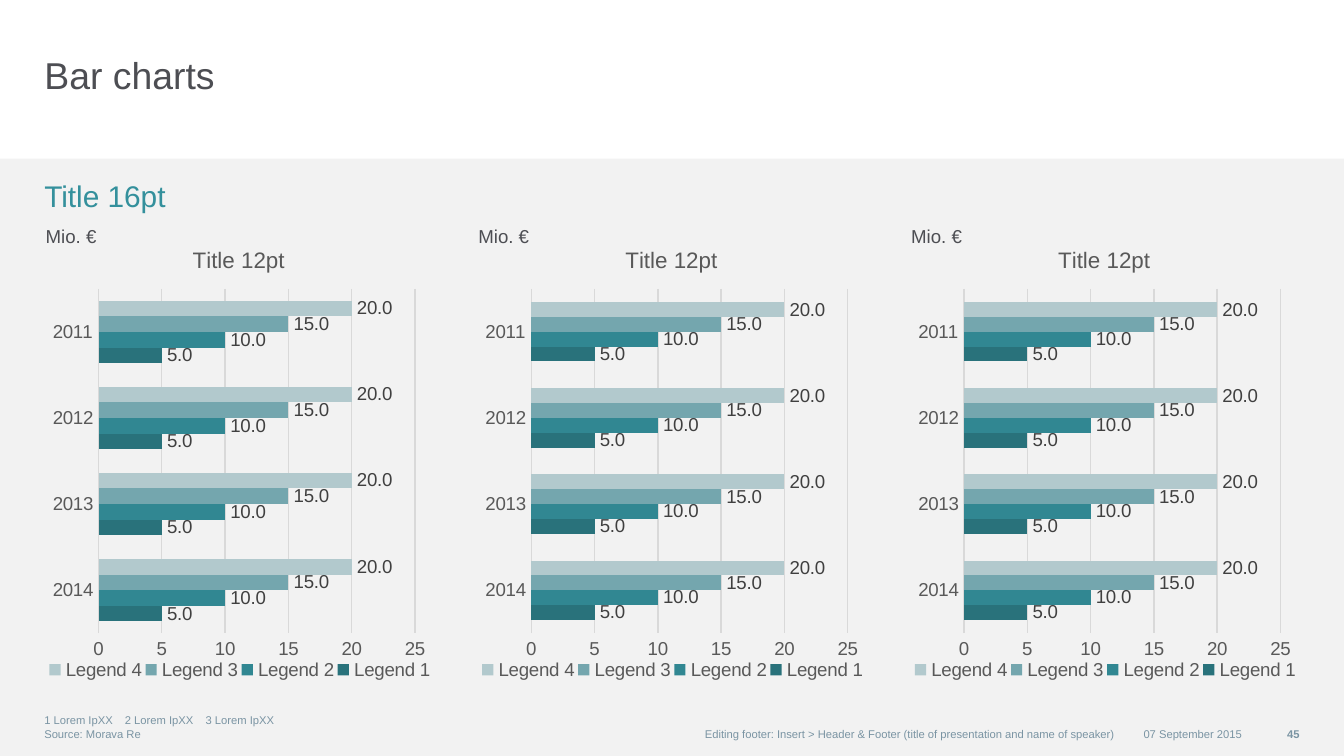
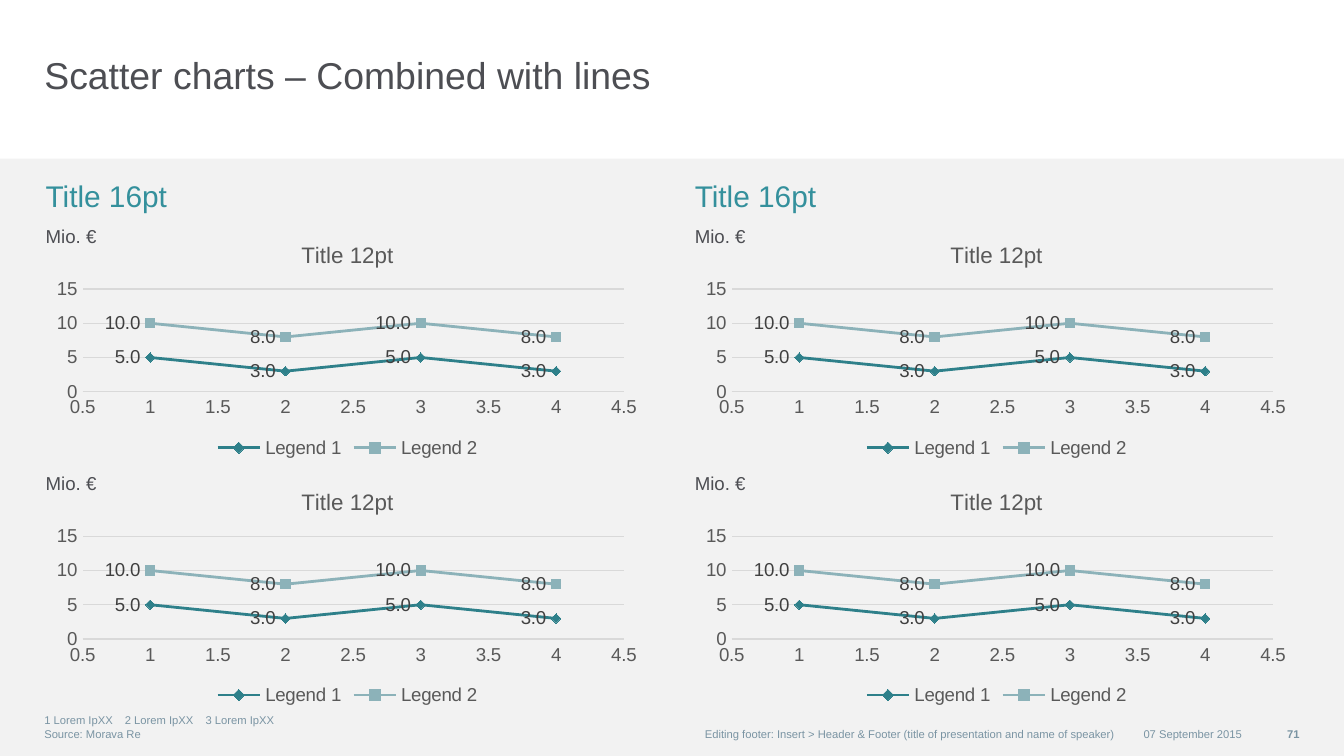
from lxml import etree
from pptx import Presentation
from pptx.chart.data import CategoryChartData, XyChartData
from pptx.chart.datalabel import DataLabels
from pptx.dml.color import RGBColor
from pptx.enum.chart import (XL_CHART_TYPE, XL_LABEL_POSITION, XL_LEGEND_POSITION,
                             XL_MARKER_STYLE, XL_TICK_MARK)
from pptx.enum.shapes import MSO_SHAPE
from pptx.enum.text import MSO_ANCHOR, PP_ALIGN
from pptx.oxml.ns import qn
from pptx.util import Inches, Pt

BAR, SCATTER = XL_CHART_TYPE.BAR_CLUSTERED, XL_CHART_TYPE.XY_SCATTER_LINES
OUTSIDE, LEFT_OF = XL_LABEL_POSITION.OUTSIDE_END, XL_LABEL_POSITION.LEFT
BOTTOM_LEGEND, NO_TICK = XL_LEGEND_POSITION.BOTTOM, XL_TICK_MARK.NONE
DIAMOND, SQUARE = XL_MARKER_STYLE.DIAMOND, XL_MARKER_STYLE.SQUARE
TOP, MIDDLE, BOTTOM = MSO_ANCHOR.TOP, MSO_ANCHOR.MIDDLE, MSO_ANCHOR.BOTTOM
LEFT, RIGHT = PP_ALIGN.LEFT, PP_ALIGN.RIGHT

FONT = "Arial"
COLORS = {"band": "F2F2F2", "text": "4D4E53", "heading": "34909C", "footer": "7A94A3",
          "chart": "595959", "label": "404040", "grid": "D9D9D9"}

# Content
HEADING, UNIT, CHART_TITLE = "Title 16pt", "Mio. €", "Title 12pt"
FOOTNOTES = ["1 Lorem IpXX\t2 Lorem IpXX\t3 Lorem IpXX", "Source: Morava Re"]
FOOTER = "Editing footer: Insert > Header & Footer (title of presentation and name of speaker)"
DATE = "07 September 2015"

YEARS = ["2014", "2013", "2012", "2011"]
BAR_SERIES = [("Legend 1", [5] * 4, "29727B"), ("Legend 2", [10] * 4, "318792"),
              ("Legend 3", [15] * 4, "74A6AE"), ("Legend 4", [20] * 4, "B2C9CD")]
BAR_GAPS = [150, 182, 182]

POINTS_X = [1, 2, 3, 4]
LINE_SERIES = [("Legend 1", [5, 3, 5, 3], "2E808A", DIAMOND),
               ("Legend 2", [10, 8, 10, 8], "8CB2B9", SQUARE)]

# Grid: left edge, column step, chart size
LEFT_EDGE, CHART_TOP = 0.34, 1.67
BAR_STEP, BAR_SIZE = 3.22, (2.89, 3.61)
LINE_STEP, LINE_SIZE = (4.83, 1.84), (4.49, 1.78)

# Chart parts in percent of the chart: x, y, width, height
BAR_LAYOUT = {"plot": (13.6, 13.3, 81.5, 71), "title": (36.8, 3.6),
              "legend": (0, 88.8, 100, 6)}
LINE_LAYOUT = {"plot": (6.1, 27, 89.7, 43), "title": (41.7, 5.2)}


def rgb(name):
    return RGBColor.from_string(COLORS.get(name, name))


def style_font(font, size, color, bold=False):
    font.name, font.size, font.bold = FONT, Pt(size), bold
    font.color.rgb = rgb(color)


def fill_frame(frame, lines, size, color, anchor=TOP, align=LEFT, bold=False,
               wrap=True, tabs=()):
    frame.margin_left = frame.margin_right = frame.margin_top = frame.margin_bottom = 0
    frame.word_wrap, frame.vertical_anchor = wrap, anchor
    for index, line in enumerate(lines):
        para = frame.add_paragraph() if index else frame.paragraphs[0]
        para.text, para.alignment = line, align
        if "\t" in line:
            stops = etree.SubElement(para._p.get_or_add_pPr(), qn("a:tabLst"))
            for position in tabs:
                etree.SubElement(stops, qn("a:tab"), pos=str(Inches(position)), algn="l")
        style_font(para.font, size, color, bold)


def add_text(page, place, lines, size, color, **options):
    box = page.shapes.add_textbox(*map(Inches, place))
    fill_frame(box.text_frame, lines, size, color, **options)


def add_page(deck, title, number):
    page = deck.slides.add_slide(deck.slide_layouts[5])
    # Content band
    top = Inches(1.18)
    band = page.shapes.add_shape(MSO_SHAPE.RECTANGLE, 0, top, deck.slide_width,
                                 deck.slide_height - top)
    band.shadow.inherit = False
    band.fill.solid()
    band.fill.fore_color.rgb = rgb("band")
    band.line.fill.background()
    # Title
    holder = page.shapes.title
    holder.left, holder.top, holder.width, holder.height = map(Inches, (0.33, 0.39, 7.48, 0.61))
    fill_frame(holder.text_frame, [title], 20, "text")
    # Footer row
    add_text(page, (0.33, 5.35, 3.94, 0.16), FOOTNOTES, 6, "footer", anchor=BOTTOM,
             tabs=(0.6, 1.2))
    for left, width, text, bold in [(4.35, 3.94, FOOTER, False), (8.33, 0.91, DATE, False),
                                    (9.24, 0.43, number, True)]:
        add_text(page, (left, 5.35, width, 0.22), [text], 6, "footer", anchor=MIDDLE,
                 align=RIGHT, bold=bold)
    return page


def add_heading(page, left, width):
    add_text(page, (left, 1.32, width, 0.35), [HEADING], 16, "heading")


def place_part(part, percents, index, inner=False):
    layout = part.find(qn("c:layout"))
    if layout is None:
        layout = part.makeelement(qn("c:layout"))
        part.insert(index, layout)
    manual = etree.SubElement(layout, qn("c:manualLayout"))
    if inner:
        etree.SubElement(manual, qn("c:layoutTarget"), val="inner")
    for axis in "xy":
        etree.SubElement(manual, qn(f"c:{axis}Mode"), val="edge")
    for name, percent in zip("xywh", percents):
        etree.SubElement(manual, qn(f"c:{name}"), val=f"{percent / 100:.3f}")


def no_fill():
    props = etree.Element(qn("c:spPr"))
    etree.SubElement(props, qn("a:noFill"))
    etree.SubElement(etree.SubElement(props, qn("a:ln")), qn("a:noFill"))
    return props


def style_line(line, color, width):
    line.color.rgb, line.width = rgb(color), Pt(width)


def set_scale(axis, low, high, step):
    axis.minimum_scale, axis.maximum_scale, axis.major_unit = low, high, step


def add_chart(page, kind, place, data, layout, label_position):
    chart = page.shapes.add_chart(kind, *map(Inches, place), data).chart
    style_font(chart.font, 10, "chart")
    chart.plots[0].vary_by_categories = False
    # Title and legend
    chart.has_title = chart.has_legend = True
    title = chart.chart_title
    title.text_frame.text = CHART_TITLE
    style_font(title.text_frame.paragraphs[0].font, 12, "chart")
    place_part(title._element, layout["title"], 1)
    legend = chart.legend
    legend.position, legend.include_in_layout = BOTTOM_LEGEND, False
    style_font(legend.font, 10, "chart")
    if "legend" in layout:
        place_part(legend._element, layout["legend"], 1)
    # Axes
    for axis in (chart.category_axis, chart.value_axis):
        axis.major_tick_mark = axis.minor_tick_mark = NO_TICK
        axis.has_major_gridlines = False
        style_font(axis.tick_labels.font, 10, "chart")
    style_line(chart.category_axis.format.line, "grid", 0.75)
    chart.value_axis.format.line.fill.background()
    chart.value_axis.has_major_gridlines = True
    style_line(chart.value_axis.major_gridlines.format.line, "grid", 0.75)
    # Value labels
    for series in chart.plots[0].series:
        labels = DataLabels(series._element.get_or_add_dLbls())
        labels.show_value, labels.position = True, label_position
        labels.number_format, labels.number_format_is_linked = "#,##0.0", False
        style_font(labels.font, 10, "label")
    # Clear background
    space = chart._chartSpace
    plot_area = space.find(qn("c:chart")).find(qn("c:plotArea"))
    place_part(plot_area, layout["plot"], 0, inner=True)
    plot_area.append(no_fill())
    space.find(qn("c:txPr")).addprevious(no_fill())
    # Unit above the axis
    add_text(page, (*place[:2], 0.38, 0.17), [UNIT], 10, "text", wrap=False)
    return chart


def add_bar_chart(page, place, gap):
    data = CategoryChartData()
    data.categories = YEARS
    for name, values, _ in BAR_SERIES:
        data.add_series(name, values)
    chart = add_chart(page, BAR, place, data, BAR_LAYOUT, OUTSIDE)
    chart.plots[0].gap_width = gap
    set_scale(chart.value_axis, 0, 25, 5)
    for series, (_, _, color) in zip(chart.plots[0].series, BAR_SERIES):
        series.format.fill.solid()
        series.format.fill.fore_color.rgb = rgb(color)


def add_line_chart(page, place):
    data = XyChartData()
    for name, values, _, _ in LINE_SERIES:
        points = data.add_series(name)
        for x, y in zip(POINTS_X, values):
            points.add_data_point(x, y)
    chart = add_chart(page, SCATTER, place, data, LINE_LAYOUT, LEFT_OF)
    set_scale(chart.category_axis, 0.5, 4.5, 0.5)
    set_scale(chart.value_axis, 0, 15, 5)
    for series, (_, _, color, symbol) in zip(chart.plots[0].series, LINE_SERIES):
        style_line(series.format.line, color, 1.5)
        marker = series.marker
        marker.style, marker.size = symbol, 5
        marker.format.fill.solid()
        marker.format.fill.fore_color.rgb = rgb(color)
        style_line(marker.format.line, color, 0.75)


def main():
    deck = Presentation()
    deck.slide_width, deck.slide_height = Inches(10), Inches(10) * 9 // 16

    # Bar charts: one row of three
    page = add_page(deck, "Bar charts", "45")
    add_heading(page, 0.33, 9.33)
    for column, gap in enumerate(BAR_GAPS):
        add_bar_chart(page, (LEFT_EDGE + column * BAR_STEP, CHART_TOP, *BAR_SIZE), gap)

    # Scatter charts: two by two
    page = add_page(deck, "Scatter charts – Combined with lines", "71")
    for column in range(2):
        left = LEFT_EDGE + column * LINE_STEP[0]
        add_heading(page, left, 4.5)
        for row in range(2):
            add_line_chart(page, (left, CHART_TOP + row * LINE_STEP[1], *LINE_SIZE))

    deck.save("out.pptx")


if __name__ == "__main__":
    main()
